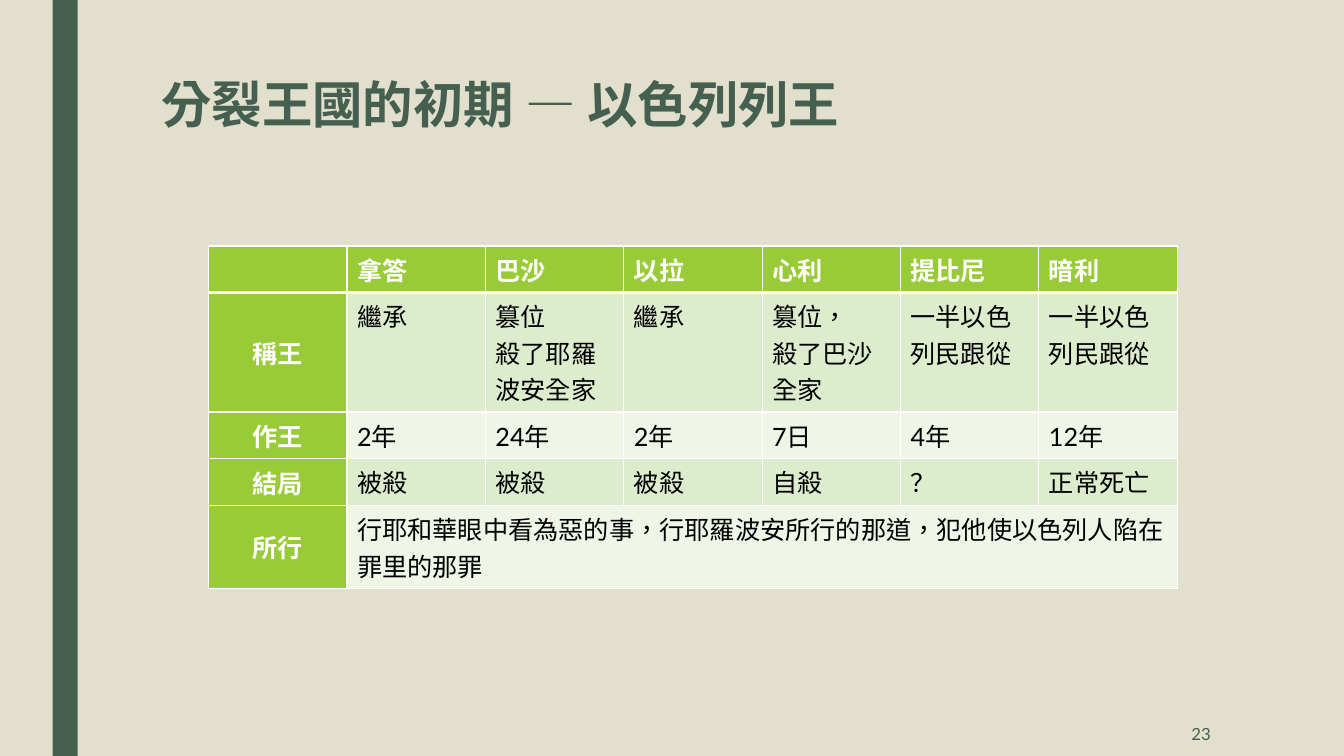
from dataclasses import dataclass

from lxml import etree
from pptx import Presentation
from pptx.dml.color import RGBColor
from pptx.enum.lang import MSO_LANGUAGE_ID
from pptx.enum.shapes import MSO_SHAPE
from pptx.enum.text import MSO_ANCHOR, PP_ALIGN
from pptx.oxml.ns import qn
from pptx.slide import Slide
from pptx.table import _Cell
from pptx.text.text import TextFrame
from pptx.util import Pt

RECTANGLE = MSO_SHAPE.RECTANGLE
TOP, MIDDLE = MSO_ANCHOR.TOP, MSO_ANCHOR.MIDDLE
LEFT, CENTER, RIGHT = PP_ALIGN.LEFT, PP_ALIGN.CENTER, PP_ALIGN.RIGHT
CHINESE = MSO_LANGUAGE_ID.TRADITIONAL_CHINESE

FONT = "Lato"
COLORS = {
    "background": "E2DFCC",
    "forest": "455F51",
    "heading": "99CB38",
    "odd_row": "DEECCE",
    "even_row": "EFF6E8",
    "white": "FFFFFF",
    "black": "000000",
}
COLUMN_WIDTH, ROW_HEIGHT = 98.85, 29.2


@dataclass(frozen=True)
class TextStyle:
    size: float
    color: str
    bold: bool = False
    align: PP_ALIGN = LEFT
    anchor: MSO_ANCHOR = TOP


@dataclass(frozen=True)
class KingsRow:
    heading: str
    entries: tuple[str, ...]


TITLE = TextStyle(36, "forest", bold=True)
PAGE_NUMBER = TextStyle(12, "forest", align=RIGHT, anchor=MIDDLE)
KING_NAME = TextStyle(18, "white", bold=True)
ROW_HEADING = TextStyle(18, "white", bold=True, align=CENTER, anchor=MIDDLE)
ENTRY = TextStyle(18, "black")
SHARED_ENTRY = TextStyle(18, "black", anchor=MIDDLE)

KINGS_ROWS = (
    KingsRow("", ("拿答", "巴沙", "以拉", "心利", "提比尼", "暗利")),
    KingsRow("稱王", ("繼承", "篡位\n殺了耶羅波安全家", "繼承", "篡位，\n殺了巴沙全家",
                    "一半以色列民跟從", "一半以色列民跟從")),
    KingsRow("作王", ("2年", "24年", "2年", "7日", "4年", "12年")),
    KingsRow("結局", ("被殺", "被殺", "被殺", "自殺", "？", "正常死亡")),
    KingsRow("所行", ("行耶和華眼中看為惡的事，行耶羅波安所行的那道，犯他使以色列人陷在罪里的那罪",)),
)


def rgb(color: str) -> RGBColor:
    return RGBColor.from_string(COLORS[color])


def write(frame: TextFrame, text: str, style: TextStyle) -> None:
    """Put each line of the text in its own paragraph."""
    for index, line in enumerate(text.split("\n")):
        paragraph = frame.add_paragraph() if index else frame.paragraphs[0]
        paragraph.alignment = style.align
        run = paragraph.add_run()
        run.text = line
        run.font.name = FONT
        run.font.size = Pt(style.size)
        run.font.bold = style.bold
        run.font.color.rgb = rgb(style.color)
        run.font.language_id = CHINESE


def add_borders(cell: _Cell, top: float, bottom: float) -> None:
    properties = cell._tc.get_or_add_tcPr()
    for side, width in (("L", 1), ("R", 1), ("T", top), ("B", bottom)):
        line = etree.SubElement(properties, qn(f"a:ln{side}"), w=str(Pt(width)))
        fill = etree.SubElement(line, qn("a:solidFill"))
        etree.SubElement(fill, qn("a:srgbClr"), val=COLORS["white"])


def fill_cell(cell: _Cell, text: str, style: TextStyle, color: str) -> None:
    cell.fill.solid()
    cell.fill.fore_color.rgb = rgb(color)
    cell.vertical_anchor = style.anchor
    if text:
        write(cell.text_frame, text, style)


def add_kings_table(slide: Slide) -> None:
    row_count, column_count = len(KINGS_ROWS), len(KINGS_ROWS[0].entries) + 1
    frame = slide.shapes.add_table(row_count, column_count, Pt(149), Pt(175.7),
                                   Pt(COLUMN_WIDTH * column_count), Pt(210.2))
    table = frame.table
    for column in table.columns:
        column.width = Pt(COLUMN_WIDTH)
    for row in table.rows:
        row.height = Pt(ROW_HEIGHT)
    frame.height = Pt(210.2)

    for r, kings_row in enumerate(KINGS_ROWS):
        for c in range(column_count):
            add_borders(table.cell(r, c), top=3 if r == 1 else 1, bottom=3 if r == 0 else 1)
        fill_cell(table.cell(r, 0), kings_row.heading, ROW_HEADING, "heading")
        shared = len(kings_row.entries) == 1
        if shared:
            table.cell(r, 1).merge(table.cell(r, column_count - 1))
        style = KING_NAME if r == 0 else SHARED_ENTRY if shared else ENTRY
        color = "heading" if r == 0 else "odd_row" if r % 2 else "even_row"
        for c, entry in enumerate(kings_row.entries, start=1):
            fill_cell(table.cell(r, c), entry, style, color)


def add_side_bar(slide: Slide) -> None:
    bar = slide.shapes.add_shape(RECTANGLE, Pt(37.5), Pt(0), Pt(18), Pt(540))
    bar.shadow.inherit = False
    bar.fill.solid()
    bar.fill.fore_color.rgb = rgb("forest")
    bar.line.fill.background()


def set_title(slide: Slide, text: str) -> None:
    title = slide.shapes.title
    title.left, title.top, title.width, title.height = Pt(108), Pt(54), Pt(771), Pt(57)
    title.text_frame.vertical_anchor = TITLE.anchor
    write(title.text_frame, text, TITLE)
    title.text_frame.paragraphs[0].line_spacing = 0.89


def add_page_number(slide: Slide, number: str) -> None:
    box = slide.shapes.add_textbox(Pt(746), Pt(508.3), Pt(126), Pt(31.7))
    box.text_frame.word_wrap = True
    box.text_frame.vertical_anchor = PAGE_NUMBER.anchor
    write(box.text_frame, number, PAGE_NUMBER)


def main() -> None:
    presentation = Presentation()
    presentation.slide_width, presentation.slide_height = Pt(960), Pt(540)
    slide = presentation.slides.add_slide(presentation.slide_layouts[5])
    slide.background.fill.solid()
    slide.background.fill.fore_color.rgb = rgb("background")
    add_side_bar(slide)
    set_title(slide, "分裂王國的初期 — 以色列列王")
    add_kings_table(slide)
    add_page_number(slide, "23")
    presentation.save("out.pptx")


if __name__ == "__main__":
    main()
